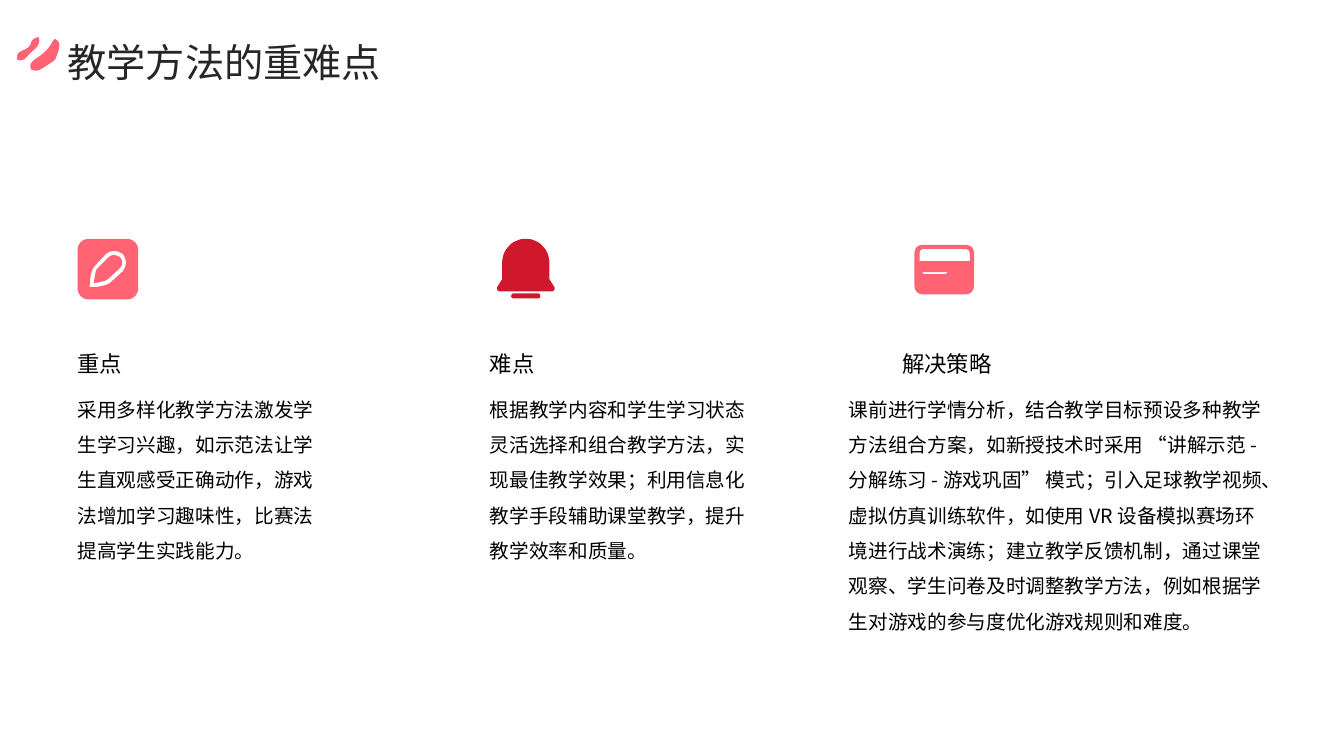
import math
from dataclasses import dataclass

from lxml import etree
from pptx import Presentation
from pptx.dml.color import RGBColor
from pptx.enum.text import MSO_ANCHOR, MSO_AUTO_SIZE, PP_ALIGN
from pptx.oxml.ns import qn
from pptx.util import Pt

PX = 9144  # EMU per px, 100 px to the inch
TOP, MIDDLE, BOTTOM = MSO_ANCHOR.TOP, MSO_ANCHOR.MIDDLE, MSO_ANCHOR.BOTTOM
LEFT = PP_ALIGN.LEFT
NO_AUTOFIT = MSO_AUTO_SIZE.NONE
TITLE_ONLY = 5


@dataclass(frozen=True)
class Theme:
    font: str = "Noto Sans CJK SC"
    title_size: int = 28
    heading_size: int = 16
    body_size: int = 14
    title: str = "262626"
    text: str = "000000"
    coral: str = "FF6374"
    crimson: str = "CF182C"


THEME = Theme()
COLUMN_LEFT, COLUMN_STEP = 77, 409
BRUSH_CENTER, BRUSH_TILT = (37, 54), 8.6

# A contour is a start point, then lines (x, y) and cubic curves (x1, y1, x2, y2, x, y).
PENCIL_TILE = [
    [(113, 253), (115, 253, 117, 254, 119, 255), (122, 258, 122, 263, 119, 266), (107, 277),
     (105, 279, 99, 280, 93, 281), (94, 275, 95, 268, 96, 267), (108, 255),
     (109, 254, 111, 253, 113, 253)],
    [(113, 249), (110, 249, 107, 250, 105, 252), (94, 264), (89, 268, 89, 285, 89, 285),
     (89, 285, 105, 285, 110, 280), (122, 269), (126, 264, 126, 257, 122, 252),
     (119, 250, 116, 249, 113, 249)],
    [(87, 237), (127, 237), (132, 237, 137, 242, 137, 247), (137, 287),
     (137, 292, 132, 297, 127, 297), (87, 297), (82, 297, 77, 292, 77, 287), (77, 247),
     (77, 242, 82, 237, 87, 237)],
]
BELL = [
    [(509, 291), (534, 291), (535, 291, 536, 292, 536, 294), (536, 295, 535, 296, 534, 296),
     (509, 296), (508, 296, 507, 295, 507, 294), (507, 292, 508, 291, 509, 291)],
    [(522, 237), (525, 237, 528, 237, 531, 239), (533, 240, 536, 241, 538, 244),
     (540, 246, 542, 248, 543, 251), (544, 254, 545, 257, 545, 260), (545, 277), (550, 285),
     (550, 286, 550, 287, 550, 287), (549, 288, 549, 289, 548, 289), (495, 289),
     (494, 289, 494, 288, 493, 287), (493, 287, 493, 286, 493, 285), (498, 277), (498, 260),
     (498, 257, 499, 254, 500, 251), (501, 248, 503, 246, 505, 244),
     (507, 241, 510, 240, 512, 239), (515, 237, 518, 237, 522, 237)],
]
CARD = [
    [(915, 270), (915, 271), (916, 272, 917, 272, 917, 272), (938, 272),
     (938, 272, 939, 272, 939, 271), (940, 270)],
    [(915, 247), (913, 247, 912, 249, 912, 251), (912, 259), (962, 259), (962, 251),
     (962, 249, 960, 247, 958, 247)],
    [(915, 243), (958, 243), (963, 243, 966, 246, 966, 251), (966, 284),
     (966, 288, 963, 292, 958, 292), (915, 292), (910, 292, 907, 288, 907, 284), (907, 251),
     (907, 246, 910, 243, 915, 243)],
]
BRUSH_STROKES = [
    [(21, 60), (20, 60, 18, 60, 17, 59), (17, 58), (16, 56, 18, 53, 19, 52),
     (21, 51, 23, 50, 25, 49), (27, 48, 29, 47, 30, 45), (31, 43, 31, 41, 32, 40),
     (34, 38, 36, 37, 38, 37), (40, 37, 39, 43, 38, 45), (36, 48, 32, 51, 29, 54),
     (28, 56, 26, 57, 24, 59), (23, 59, 22, 60, 21, 60)],
    [(34, 70), (33, 70, 32, 70, 31, 69), (28, 64, 33, 60, 36, 58), (43, 54, 49, 48, 53, 40),
     (53, 40, 54, 39, 54, 39), (55, 39), (57, 39, 59, 42, 59, 44), (59, 46, 59, 49, 58, 51),
     (57, 54, 56, 56, 55, 59), (52, 62, 48, 64, 45, 66), (42, 68, 38, 71, 34, 70)],
]

# Icon outline, icon colour, heading, body left, body width, body height, body
COLUMNS = [
    (PENCIL_TILE, THEME.coral, "重点", 77, 252, 286,
     "采用多样化教学方法激发学生学习兴趣，如示范法让学生直观感受正确动作，游戏法增加学习趣味性，"
     "比赛法提高学生实践能力。"),
    (BELL, THEME.crimson, "难点", 486, 260, 216,
     "根据教学内容和学生学习状态灵活选择和组合教学方法，实现最佳教学效果；利用信息化教学手段辅助"
     "课堂教学，提升教学效率和质量。"),
    (CARD, THEME.coral, "解决策略", 842, 413, 172,
     "课前进行学情分析，结合教学目标预设多种教学方法组合方案，如新授技术时采用 “讲解示范 - "
     "分解练习 - 游戏巩固” 模式；引入足球教学视频、虚拟仿真训练软件，如使用 VR 设备模拟赛场环境"
     "进行战术演练；建立教学反馈机制，通过课堂观察、学生问卷及时调整教学方法，例如根据学生对游戏的"
     "参与度优化游戏规则和难度。"),
]


def turn_back(point, center, degrees):
    """Undo a clockwise turn, so that the shape's own rotation restores it."""
    dx, dy = point[0] - center[0], point[1] - center[1]
    cos, sin = math.cos(math.radians(degrees)), math.sin(math.radians(degrees))
    return center[0] + dx * cos + dy * sin, center[1] - dx * sin + dy * cos


def contour_points(contour, center, rotation):
    """List a contour's points and curve controls in EMU."""
    pairs = [segment[i:i + 2] for segment in contour for i in range(0, len(segment), 2)]
    turned = [turn_back(pair, center, rotation) for pair in pairs]
    return [(round(x * PX), round(y * PX)) for x, y in turned]


def bend_curves(icon, outline):
    """Join each curve's three straight steps into one cubic curve."""
    path_xml = icon._element.find(".//" + qn("a:path"))
    steps = iter(path_xml.findall(qn("a:lnTo")))
    for contour in outline:
        for segment in contour[1:]:
            step = next(steps)
            if len(segment) == 2:
                continue
            curve = step.makeelement(qn("a:cubicBezTo"))
            step.addprevious(curve)
            for control in (step, next(steps), next(steps)):
                curve.append(control[0])
                path_xml.remove(control)


def add_icon(page, outline, color, center=(0, 0), rotation=0):
    first, *others = [contour_points(contour, center, rotation) for contour in outline]
    builder = page.shapes.build_freeform(*first[0])
    builder.add_line_segments(first[1:], close=True)
    for points in others:
        builder.move_to(*points[0])
        builder.add_line_segments(points[1:], close=True)
    icon = builder.convert_to_shape()
    bend_curves(icon, outline)
    icon.shadow.inherit = False
    icon.fill.solid()
    icon.fill.fore_color.rgb = RGBColor.from_string(color)
    icon.line.fill.background()
    icon.rotation = rotation


def write_text(frame, text, size, color, spacing, anchor):
    frame.word_wrap = True
    frame.auto_size = NO_AUTOFIT
    frame.vertical_anchor = anchor
    para = frame.paragraphs[0]
    para.text = text
    para.alignment = LEFT
    para.line_spacing = spacing
    para.font.size = Pt(size)
    para.font.color.rgb = RGBColor.from_string(color)
    para.font.name = THEME.font
    defaults = para._p.pPr.find(qn("a:defRPr"))
    etree.SubElement(defaults, qn("a:ea"), typeface=THEME.font)


def add_text(page, left, top, width, height, text, size, spacing, anchor):
    box = page.shapes.add_textbox(left * PX, top * PX, width * PX, height * PX)
    frame = box.text_frame
    frame.margin_left = frame.margin_top = frame.margin_right = frame.margin_bottom = 0
    write_text(frame, text, size, THEME.text, spacing, anchor)


def set_title(page, text):
    title = page.shapes.title
    title.left, title.top, title.width, title.height = 57 * PX, 26 * PX, 1188 * PX, 56 * PX
    write_text(title.text_frame, text, THEME.title_size, THEME.title, 1.3, MIDDLE)


def main():
    deck = Presentation()
    deck.slide_width, deck.slide_height = 1333 * PX, 750 * PX
    page = deck.slides.add_slide(deck.slide_layouts[TITLE_ONLY])
    set_title(page, "教学方法的重难点")
    add_icon(page, BRUSH_STROKES, THEME.coral, BRUSH_CENTER, BRUSH_TILT)
    for index, (outline, color, heading, left, width, height, body) in enumerate(COLUMNS):
        add_icon(page, outline, color)
        add_text(page, COLUMN_LEFT + index * COLUMN_STEP, 303, 360, 71,
                 heading, THEME.heading_size, 1.3, BOTTOM)
        add_text(page, left, 383, width, height, body, THEME.body_size, 1.5, TOP)
    deck.save("out.pptx")


if __name__ == "__main__":
    main()
